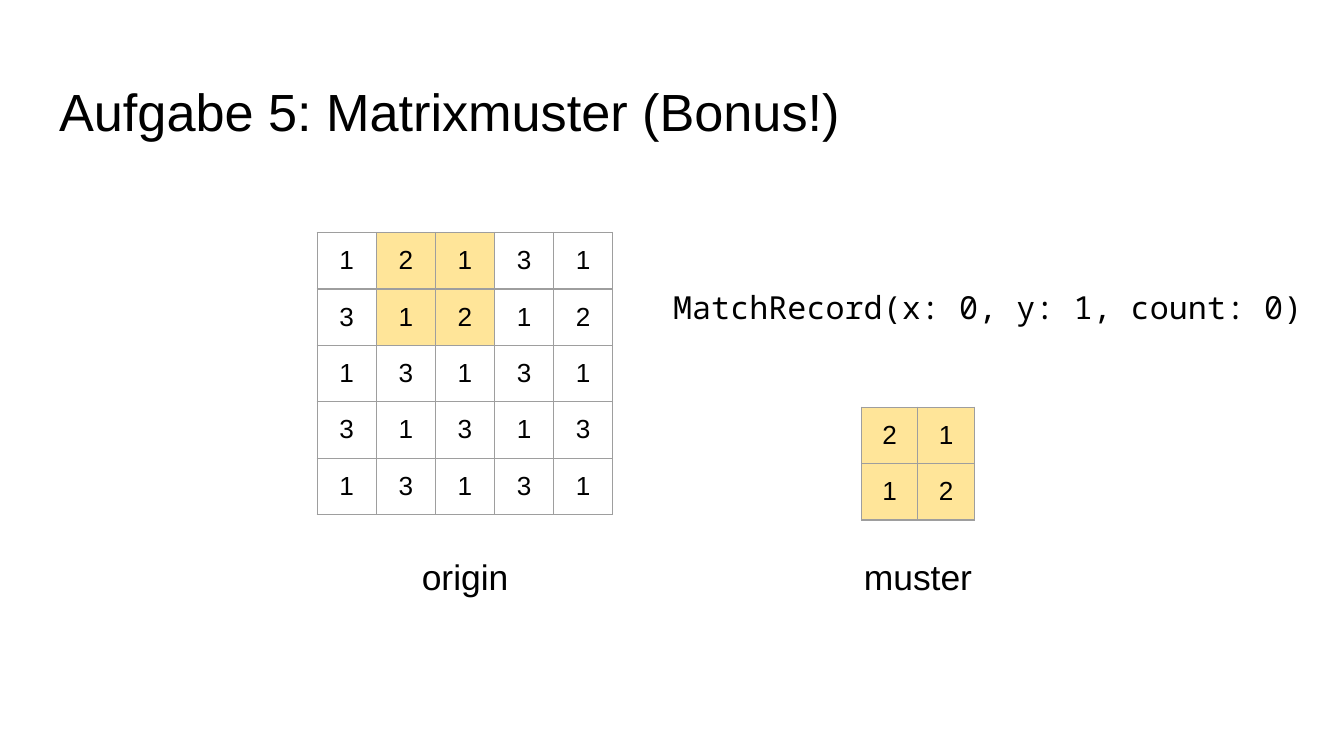
from pptx import Presentation
from pptx.dml.color import RGBColor
from pptx.enum import text
from pptx.oxml import parse_xml
from pptx.oxml.ns import nsdecls
from pptx.util import Inches, Pt

BLACK = RGBColor(0, 0, 0)
GOLD = RGBColor(0xFF, 0xE5, 0x99)
GREY = RGBColor(0x9E, 0x9E, 0x9E)
PAD = Inches(0.1)
LEFT, MID = text.PP_ALIGN.LEFT, text.PP_ALIGN.CENTER


def style(part, words, size, font="Arial", align=LEFT):
    part.margin_left = part.margin_right = PAD
    part.margin_top = part.margin_bottom = PAD
    part.vertical_anchor = text.MSO_ANCHOR.TOP
    frame = getattr(part, "text_frame", part)
    frame.text = words
    frame.word_wrap = True
    para = frame.paragraphs[0]
    para.alignment = align
    para.font.size = Pt(size)
    para.font.name = font
    para.font.color.rgb = BLACK


def grid(left, top, width, rows, marked):
    count = len(rows[0])
    table = slide.shapes.add_table(
        len(rows), count, Inches(left), Inches(top),
        Inches(width * count), Inches(0.42 * len(rows))).table
    table.first_row = table.horz_banding = False
    for r, row in enumerate(rows):
        for c, digit in enumerate(row):
            cell = table.cell(r, c)
            style(cell, digit, 14, align=MID)
            props = cell._tc.get_or_add_tcPr()
            for side in ("lnL", "lnR", "lnT", "lnB"):
                props.append(parse_xml(
                    f'<a:{side} {nsdecls("a")} w="{Pt(0.75)}"><a:solidFill>'
                    f'<a:srgbClr val="{GREY}"/></a:solidFill></a:{side}>'))
            if (r, c) in marked:
                cell.fill.solid()
                cell.fill.fore_color.rgb = GOLD
            else:
                cell.fill.background()


deck = Presentation()
deck.slide_width = Inches(10)
deck.slide_height = Inches(10) * 9 // 16
slide = deck.slides.add_slide(deck.slide_layouts[5])

title = slide.shapes.title
title.left, title.top = Inches(0.34), Inches(0.49)
title.width, title.height = Inches(9.32), Inches(0.63)
style(title.text_frame, "Aufgabe 5: Matrixmuster (Bonus!)", 28)
title.text_frame.auto_size = text.MSO_AUTO_SIZE.NONE

grid(2.36, 1.73, 0.44, ["12131", "31212", "13131", "31313", "13131"],
     {(0, 1), (0, 2), (1, 1), (1, 2)})
grid(6.41, 3.03, 0.42, ["21", "12"], {(0, 0), (0, 1), (1, 0), (1, 1)})

for left, top, width, height, words, size, font, align in [
    (3.04, 4.03, 1.42, 0.49, "origin", 19, "Arial", LEFT),
    (6.12, 4.03, 1.42, 0.49, "muster", 19, "Arial", MID),
    (4.91, 2.04, 6.3, 0.56, "MatchRecord(x: 0, y: 1, count: 0)", 17,
     "Noto Sans Mono", LEFT),
]:
    box = slide.shapes.add_textbox(
        Inches(left), Inches(top), Inches(width), Inches(height))
    style(box.text_frame, words, size, font, align)

deck.save("out.pptx")
